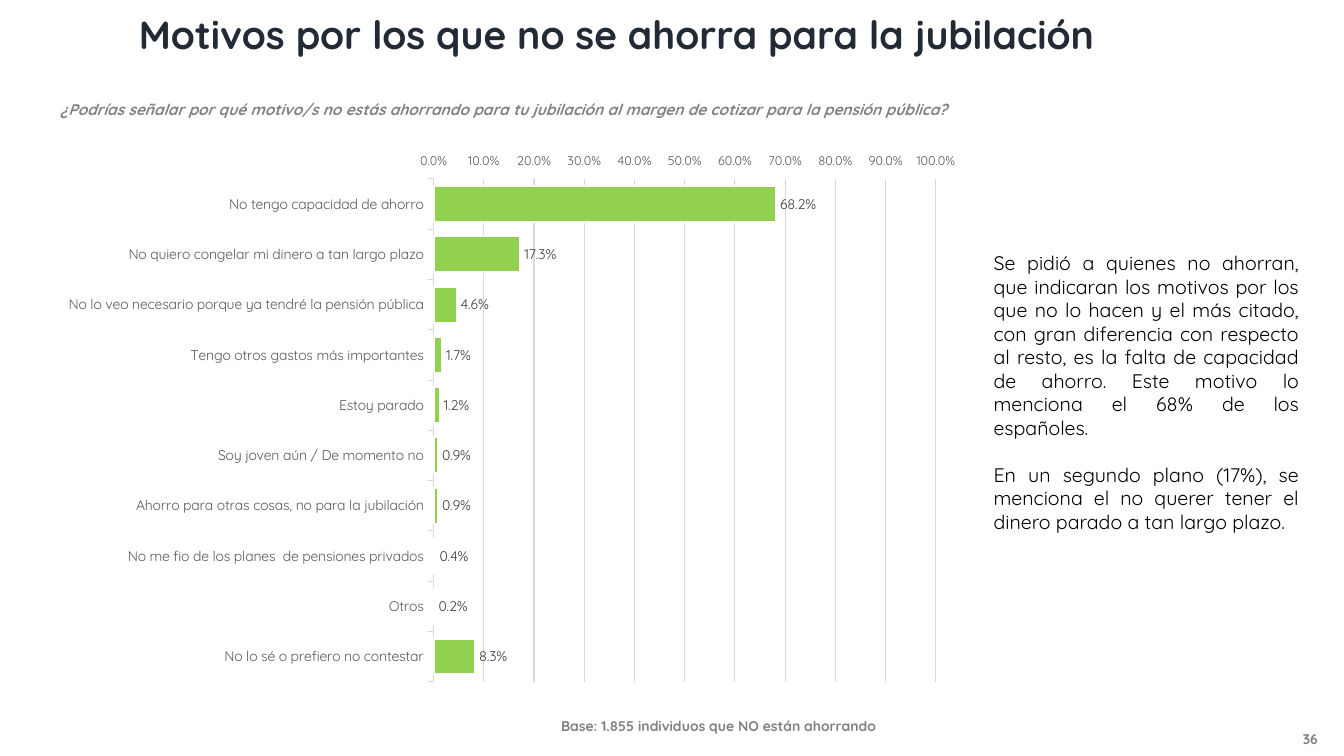
from lxml.etree import SubElement
from pptx import Presentation
from pptx.chart.data import CategoryChartData
from pptx.dml.color import RGBColor
from pptx.enum.chart import XL_CHART_TYPE, XL_LABEL_POSITION, XL_TICK_MARK
from pptx.enum.text import MSO_ANCHOR, PP_ALIGN
from pptx.oxml.ns import qn
from pptx.util import Cm, Pt

FONT = "Quicksand"
GREY = "808080"
RULE = "D9D9D9"
GREEN = "92D050"

TITLE = "Motivos por los que no se ahorra para la jubilación"
QUESTION = ("¿Podrías señalar por qué motivo/s no estás ahorrando para tu jubilación "
            "al margen de cotizar para la pensión pública?")
BASE = "Base: 1.855 individuos que NO están ahorrando"
PAGE_NUMBER = "36"
COMMENTARY = [
    "Se pidió a quienes no ahorran, que indicaran los motivos por los que no lo hacen "
    "y el más citado, con gran diferencia con respecto al resto, es la falta de capacidad "
    "de ahorro. Este motivo lo menciona el 68% de los españoles.",
    "En un segundo plano (17%), se menciona el no querer tener el dinero parado "
    "a tan largo plazo.",
]
REASONS = {
    "No tengo capacidad de ahorro": 0.682,
    "No quiero congelar mi dinero a tan largo plazo": 0.173,
    "No lo veo necesario porque ya tendré la pensión pública": 0.046,
    "Tengo otros gastos más importantes": 0.017,
    "Estoy parado": 0.012,
    "Soy joven aún / De momento no": 0.009,
    "Ahorro para otras cosas, no para la jubilación": 0.009,
    "No me fio de los planes  de pensiones privados": 0.004,
    "Otros": 0.002,
    "No lo sé o prefiero no contestar": 0.083,
}
CHART_AREA = (1.27, 3.58, 23.27, 13.89)
PLOT_SHARE = {"x": 0.415, "y": 0.067, "w": 0.544, "h": 0.912}


def rgb(color):
    return RGBColor.from_string(color)


def style(font, size, color, bold=False, italic=False):
    font.name = FONT
    font.size = Pt(size)
    font.color.rgb = rgb(color)
    font.bold = bold
    font.italic = italic


def add_text(slide, area, paragraphs, size, color, bold=False, italic=False,
             align=PP_ALIGN.LEFT, wrap=False, anchor=MSO_ANCHOR.TOP):
    frame = slide.shapes.add_textbox(*map(Cm, area)).text_frame
    frame.word_wrap = wrap
    frame.vertical_anchor = anchor
    for index, words in enumerate(paragraphs):
        paragraph = frame.add_paragraph() if index else frame.paragraphs[0]
        paragraph.alignment = align
        if index:
            paragraph.space_before = Pt(size * 1.2)
        run = paragraph.add_run()
        run.text = words
        style(run.font, size, color, bold, italic)


def place_plot(chart):
    plot_area = chart.plots[0]._element.getparent()
    for old in plot_area.findall(qn("c:layout")):
        plot_area.remove(old)
    layout = SubElement(plot_area, qn("c:layout"))
    plot_area.insert(0, layout)
    manual = SubElement(layout, qn("c:manualLayout"))
    settings = {"layoutTarget": "inner", "xMode": "edge", "yMode": "edge", **PLOT_SHARE}
    for tag, value in settings.items():
        SubElement(manual, qn(f"c:{tag}")).set("val", str(value))


def add_reasons_chart(slide):
    data = CategoryChartData(number_format="0.0%")
    data.categories = list(REASONS)
    data.add_series("Motivos", list(REASONS.values()))
    chart = slide.shapes.add_chart(
        XL_CHART_TYPE.BAR_CLUSTERED, *map(Cm, CHART_AREA), data).chart
    chart.has_title = False
    chart.has_legend = False
    style(chart.font, 10, "000000")
    place_plot(chart)

    reasons = chart.category_axis
    reasons.reverse_order = True
    reasons.major_tick_mark = XL_TICK_MARK.OUTSIDE
    reasons.format.line.color.rgb = rgb(RULE)
    reasons.format.line.width = Pt(0.75)
    style(reasons.tick_labels.font, 10, "595959")

    shares = chart.value_axis
    shares.minimum_scale, shares.maximum_scale, shares.major_unit = 0, 1, 0.1
    shares.major_tick_mark = XL_TICK_MARK.OUTSIDE
    shares.format.line.fill.background()
    shares.has_major_gridlines = True
    shares.major_gridlines.format.line.color.rgb = rgb(RULE)
    shares.major_gridlines.format.line.width = Pt(0.75)
    shares.tick_labels.number_format = "0.0%"
    shares.tick_labels.number_format_is_linked = False
    style(shares.tick_labels.font, 9, "595959")

    plot = chart.plots[0]
    plot.gap_width = 40
    plot.vary_by_categories = False
    bars = plot.series[0]
    bars.invert_if_negative = False
    bars.format.fill.solid()
    bars.format.fill.fore_color.rgb = rgb(GREEN)
    bars.format.line.color.rgb = rgb("FFFFFF")
    bars.format.line.width = Pt(1.5)
    labels = bars.data_labels
    labels.show_value = True
    labels.number_format = "0.0%"
    labels.number_format_is_linked = False
    labels.position = XL_LABEL_POSITION.OUTSIDE_END
    style(labels.font, 10, "404040")


def main():
    deck = Presentation()
    deck.slide_width, deck.slide_height = Cm(33.87), Cm(19.05)
    slide = deck.slides.add_slide(deck.slide_layouts[6])
    add_text(slide, (32.16, 18.21, 1.72, 0.84), [PAGE_NUMBER], 10, GREY, bold=True,
             align=PP_ALIGN.CENTER, wrap=True, anchor=MSO_ANCHOR.MIDDLE)
    add_text(slide, (1.27, 2.39, 23.27, 0.74), [QUESTION], 11, GREY, bold=True, italic=True)
    add_text(slide, (13.89, 17.96, 8.66, 0.69), [BASE], 10, GREY, bold=True)
    add_text(slide, (3.25, 0.13, 25.35, 1.45), [TITLE], 28, "222A35", bold=True)
    add_reasons_chart(slide)
    add_text(slide, (24.79, 6.2, 8.2, 8.03), COMMENTARY, 14, "000000",
             align=PP_ALIGN.JUSTIFY, wrap=True)
    deck.save("out.pptx")


if __name__ == "__main__":
    main()
